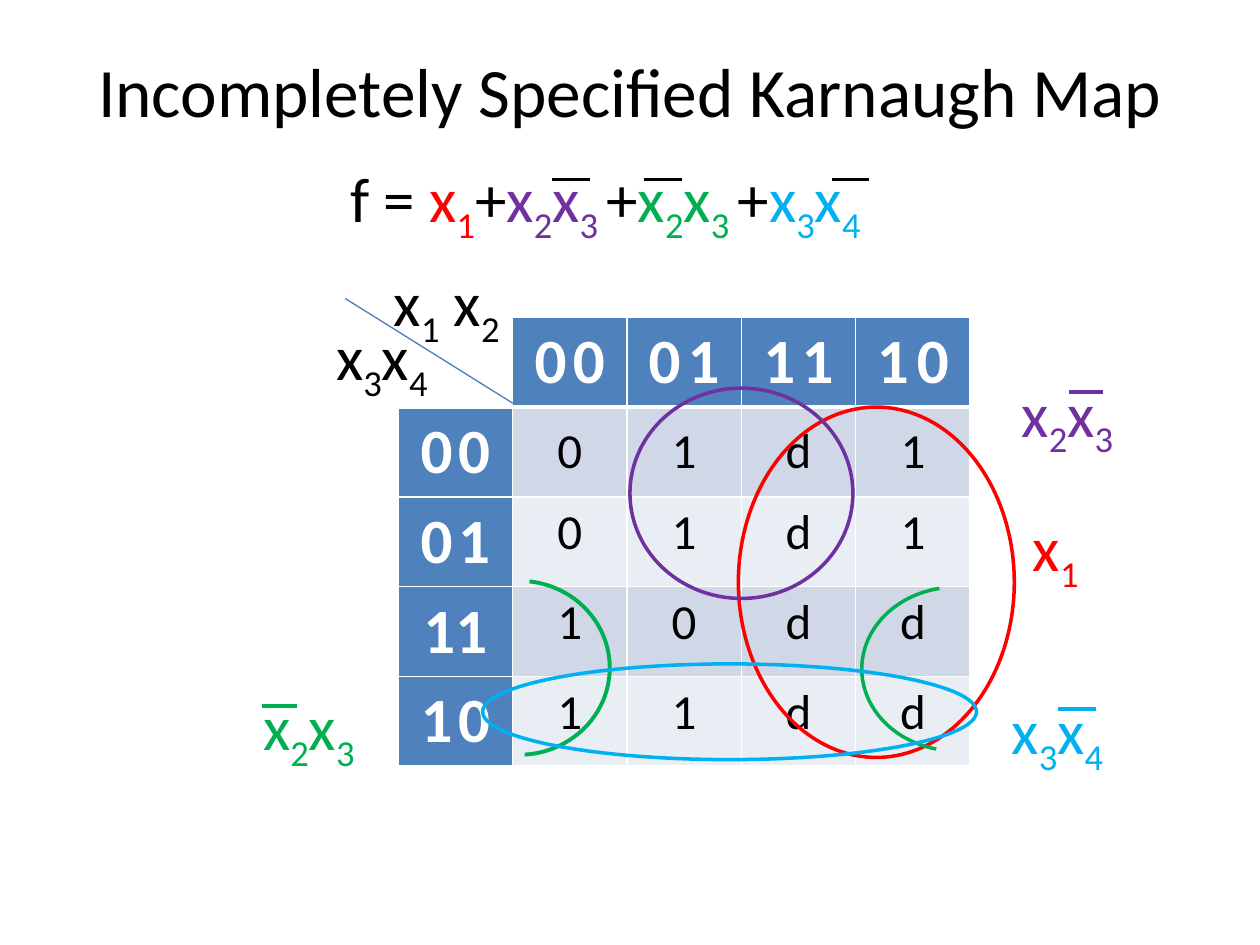
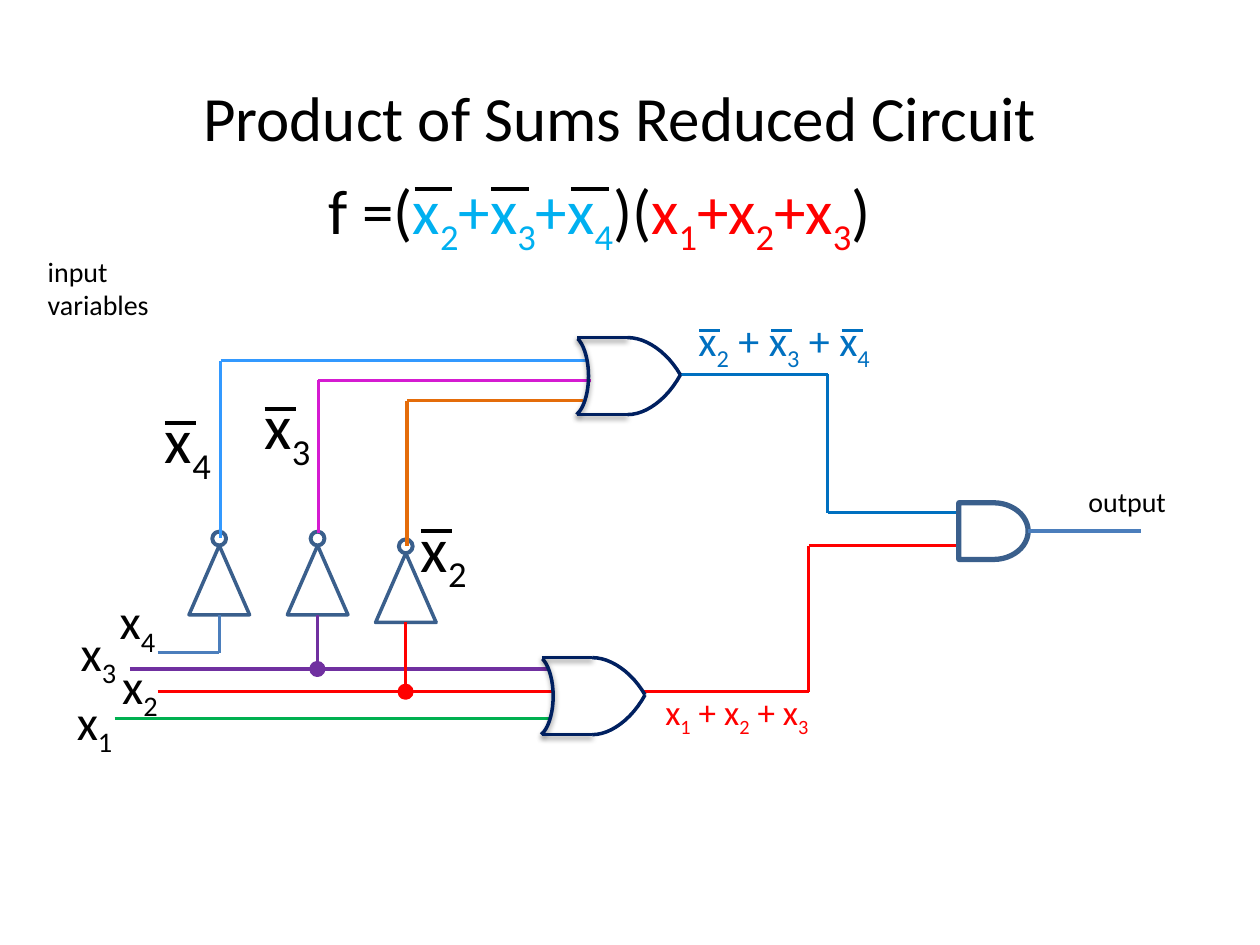
from itertools import pairwise

from lxml import etree
from pptx import Presentation
from pptx.dml.color import RGBColor
from pptx.enum.shapes import MSO_CONNECTOR, MSO_SHAPE
from pptx.enum.text import MSO_ANCHOR, PP_ALIGN
from pptx.oxml.ns import qn
from pptx.util import Pt

STRAIGHT = MSO_CONNECTOR.STRAIGHT
ELLIPSE, ARC = MSO_SHAPE.OVAL, MSO_SHAPE.ARC
TRIANGLE, DELAY = MSO_SHAPE.ISOSCELES_TRIANGLE, MSO_SHAPE.FLOWCHART_DELAY
CENTER, LEFT = PP_ALIGN.CENTER, PP_ALIGN.LEFT
MIDDLE, TOP = MSO_ANCHOR.MIDDLE, MSO_ANCHOR.TOP

FONT = "Calibri"
COLORS = {
    "black": "000000", "white": "FFFFFF", "red": "FF0000", "purple": "7030A0",
    "green": "00B050", "sky": "00B0F0", "blue": "0070C0", "steel": "4B7EBC",
    "gate": "3A5F8C", "navy": "002060", "azure": "3399FF", "magenta": "D51BD1",
    "orange": "E46C0A", "header": "4F81BD", "band_dark": "D0D8E8", "band_light": "E9EDF4",
}


def color_of(name):
    """Return the RGB colour with the given name."""
    return RGBColor.from_string(COLORS[name])


def add_run(paragraph, text, size, color, bold=False, subscript=False):
    """Append one formatted run to a paragraph."""
    run = paragraph.add_run()
    run.text = text
    run.font.name = FONT
    run.font.size = Pt(size)
    run.font.bold = bold
    run.font.color.rgb = color_of(color)
    if subscript:
        run.font._element.set("baseline", "-25000")


def write_text(frame, pieces, size=36, color="black", align=LEFT, anchor=TOP):
    """Write text, or (text, colour) pieces, with subscripts in square brackets."""
    frame.word_wrap = True
    frame.vertical_anchor = anchor
    paragraph = frame.paragraphs[0]
    paragraph.alignment = align
    for text, piece_color in [(pieces, color)] if isinstance(pieces, str) else pieces:
        first, *others = text.split("[")
        if first:
            add_run(paragraph, first, size, piece_color)
        for part in others:
            index, _, rest = part.partition("]")
            add_run(paragraph, index, size, piece_color, subscript=True)
            if rest:
                add_run(paragraph, rest, size, piece_color)


def add_label(slide, box, pieces, inset=True, **text_format):
    """Add a text box, with or without inner margins."""
    frame = slide.shapes.add_textbox(*map(Pt, box)).text_frame
    if not inset:
        frame.margin_left = frame.margin_right = frame.margin_top = frame.margin_bottom = 0
    write_text(frame, pieces, **text_format)


def finish_outline(shape, color, weight, shadowed=False):
    """Set the line of a shape or connector and its shadow."""
    shape.line.color.rgb = color_of(color)
    shape.line.width = Pt(weight)
    properties = shape._element.spPr
    effects = etree.SubElement(properties, qn("a:effectLst"))
    if shadowed:
        shadow = etree.SubElement(effects, qn("a:outerShdw"), blurRad=str(Pt(3.1)),
                                  dist=str(Pt(1.6)), dir="5400000", rotWithShape="0")
        tint = etree.SubElement(shadow, qn("a:srgbClr"), val=COLORS["black"])
        etree.SubElement(tint, qn("a:alpha"), val="38000")


def add_line(slide, start, end, color, weight=1.75, shadowed=False):
    """Add a straight connector between two points."""
    connector = slide.shapes.add_connector(STRAIGHT, *map(Pt, (*start, *end)))
    finish_outline(connector, color, weight, shadowed)
    return connector


def add_outline(slide, kind, box, color, weight=2, fill=None, angles=(), shadowed=False):
    """Add a preset shape, hollow unless a fill is given."""
    shape = slide.shapes.add_shape(kind, *map(Pt, box))
    for index, angle in enumerate(angles):
        shape.adjustments[index] = angle
    if fill:
        shape.fill.solid()
        shape.fill.fore_color.rgb = color_of(fill)
    else:
        shape.fill.background()
    finish_outline(shape, color, weight, shadowed)
    return shape


def add_term(slide, box, pieces, bars=(), rise=13.7, length=21.6, bar_color=None,
             weight=2.25, **text_format):
    """Add a Boolean expression with bars over its negated variables."""
    add_label(slide, box, pieces, **text_format)
    left, top = box[:2]
    for bar in bars:
        add_line(slide, (left + bar, top + rise), (left + bar + length, top + rise),
                 bar_color or text_format.get("color", "black"), weight)


def add_titled_slide(presentation, title, box, size):
    """Add a title-only slide and format its title."""
    slide = presentation.slides.add_slide(presentation.slide_layouts[5])
    shape = slide.shapes.title
    shape.left, shape.top, shape.width, shape.height = map(Pt, box)
    write_text(shape.text_frame, title, size=size, align=CENTER, anchor=MIDDLE)
    return slide


def format_cell(cell, fill, top=1, bottom=1):
    """Give a cell white borders and a fill."""
    properties = cell._tc.get_or_add_tcPr()
    for side, weight in (("L", 1), ("R", 1), ("T", top), ("B", bottom)):
        border = etree.SubElement(properties, qn(f"a:ln{side}"), w=str(Pt(weight)))
        solid = etree.SubElement(border, qn("a:solidFill"))
        etree.SubElement(solid, qn("a:srgbClr"), val=COLORS["white"])
    cell.fill.solid()
    cell.fill.fore_color.rgb = color_of(fill)


def write_code(cell, code, gap):
    """Write a two-bit heading with a small space between the bits."""
    cell.vertical_anchor = MIDDLE
    paragraph = cell.text_frame.paragraphs[0]
    paragraph.alignment = CENTER
    if not gap:
        add_run(paragraph, code, 36, "white", bold=True)
        return
    for text, size in ((code[0], 36), (" ", gap), (code[1], 36)):
        add_run(paragraph, text, size, "white", bold=True)


def add_map_table(slide, box):
    """Add the Karnaugh map grid."""
    codes = ("00", "01", "11", "10")
    values = ("01d1", "01d1", "10dd", "11dd")
    frame = slide.shapes.add_table(5, 5, *map(Pt, box))
    table = frame.table
    for row in table.rows:
        row.height = Pt(46.8)
    frame.height = Pt(box[3])
    format_cell(table.cell(0, 0), "white", bottom=3)
    for column, (code, gap) in enumerate(zip(codes, (16, 18, 16, 20)), 1):
        cell = table.cell(0, column)
        format_cell(cell, "header", bottom=3)
        write_code(cell, code, gap)
    for row, (code, gap, entries) in enumerate(zip(codes, (14, 14, None, 14), values), 1):
        top = 3 if row == 1 else 1
        format_cell(table.cell(row, 0), "header", top=top)
        write_code(table.cell(row, 0), code, gap)
        for column, entry in enumerate(entries, 1):
            cell = table.cell(row, column)
            format_cell(cell, "band_dark" if row % 2 else "band_light", top=top)
            write_text(cell.text_frame, entry, size=28, align=CENTER)
            cell.vertical_anchor = MIDDLE if row == 1 else TOP


def add_karnaugh_map(slide, box):
    """Add the map with its axis labels, loops and product terms."""
    left, top = box[:2]

    def place(x, y, *size):
        return left + x, top + y, *size

    add_map_table(slide, box)
    add_line(slide, place(65.5, 49), place(-30.2, -10.8), "steel", 0.75)
    add_label(slide, place(-9.6, -34.5, 90, 51), "x[1] x[2]")
    add_label(slide, place(-42.5, -3.6, 86, 51), "x[3]x[4]")

    loops = (
        (ELLIPSE, (194.4, 51.2, 157.7, 200.2), "red", 2, ()),
        (ARC, (265, 154.1, 108, 93.6), "green", 2, (62.42, 154.92)),
        (ARC, (17.3, 150.5, 103.7, 99.4), "green", 2.25, (166.14, 51.76)),
        (ELLIPSE, (48.3, 198, 282.2, 54.7), "sky", 2, ()),
        (ELLIPSE, (132.5, 40.4, 127.4, 120.2), "purple", 2, ()),
    )
    for kind, loop_box, color, weight, angles in loops:
        add_outline(slide, kind, place(*loop_box), color, weight, angles=angles)

    terms = (
        ("x[3]x[4]", (343.5, 210.3), "sky", (33.8,), 21.6),
        ("x[2]x[3]", (349.2, 28.8), "purple", (33.9,), 19.4),
        ("x[2]x[3]", (-84.2, 208.1), "green", (6.5,), 20),
        ("x[1]", (355.7, 105.9), "red", (), 0),
    )
    for text, corner, color, bars, length in terms:
        add_term(slide, place(*corner, 80, 51), text, bars, length=length, color=color)


def add_inverter(slide, left, top):
    """Add an upward NOT gate with its bubble."""
    add_outline(slide, TRIANGLE, (left, top + 7.9, 34.6, 39.6), "gate")
    add_outline(slide, ELLIPSE, (left + 13.3, top, 7.9, 7.9), "gate", 2.25, fill="white")


def add_or_gate(slide, left, top):
    """Add an OR gate: curved back, two edges and a pointed front."""
    add_outline(slide, ARC, (left, top, 20.9, 46.8), "navy",
                angles=(168.84, 48.41), shadowed=True)
    tip_x, tip_y, steps = 73.4, 22.7, 12
    for edge in (1.4, 45.4):
        add_line(slide, (left + 14.4, top + edge), (left + 43.2, top + edge),
                 "navy", 2, shadowed=True)
        controls = ((43.2, edge), (54, edge), (66, edge + 0.4 * (tip_y - edge)), (tip_x, tip_y))
        points = []
        for step in range(steps + 1):
            t = step / steps
            weights = ((1 - t) ** 3, 3 * t * (1 - t) ** 2, 3 * t ** 2 * (1 - t), t ** 3)
            x, y = (sum(w * p[axis] for w, p in zip(weights, controls)) for axis in (0, 1))
            points.append((Pt(left + x), Pt(top + y)))
        builder = slide.shapes.build_freeform(*points[0], scale=1.0)
        builder.add_line_segments(points[1:], close=False)
        front = builder.convert_to_shape()
        front.fill.background()
        finish_outline(front, "navy", 2)


def add_circuit(slide, left, top):
    """Add the product of sums circuit from inputs to output."""
    def place(x, y, *size):
        return left + x, top + y, *size

    for corner in ((88, 163.8), (144.2, 163.8), (194.6, 168.2)):
        add_inverter(slide, *place(*corner))

    wires = (
        ("steel", (70, 233), (105.4, 233), (105.4, 211.4)),
        ("purple", (54.2, 242.3), (293.9, 242.3)),
        ("purple", (161.4, 242.3), (161.4, 211.4)),
        ("red", (70, 255.3), (296.8, 255.3)),
        ("red", (211.8, 215.7), (211.8, 255.3)),
        ("green", (45.5, 270.4), (293.9, 270.4)),
        ("azure", (106, 167.4), (106, 66.2), (316.2, 66.2)),
        ("magenta", (161.8, 164.6), (161.8, 77.4), (317.7, 77.4)),
        ("orange", (212.6, 171.8), (212.6, 89), (313.4, 89)),
        ("blue", (368.8, 73.8), (453, 73.8), (453, 153), (527.2, 153)),
        ("red", (347.9, 255.3), (442.2, 255.3), (442.2, 171.8), (528.6, 171.8)),
    )
    for color, *points in wires:
        for start, end in pairwise(points):
            add_line(slide, place(*start), place(*end), color)
    for color, x, y in (("purple", 161.4, 242.3), ("red", 211.8, 255.3)):
        add_outline(slide, ELLIPSE, place(x - 3.6, y - 3.6, 7.2, 7.2), color, fill=color)

    for corner in ((295.4, 51.5), (275.2, 234.4)):
        add_or_gate(slide, *place(*corner))
    and_gate = add_outline(slide, DELAY, place(527.9, 147.3, 39.6, 32.4), "gate", 3)
    output_wire = add_line(slide, place(567.5, 163.5), place(632.3, 163.5), "steel", 2.5)
    output_wire.begin_connect(and_gate, 3)

    for text, x, y in (("x[4]", 48.4, 197.7), ("x[3]", 26.1, 215.7),
                       ("x[2]", 49.8, 234.4), ("x[1]", 23.9, 255.3)):
        add_label(slide, place(x, y, 36, 33.8), text, inset=False, size=28)
    for text, x, y in (("x[4]", 74.3, 89), ("x[3]", 131.2, 81), ("x[2]", 220.5, 150.9)):
        add_term(slide, place(x, y, 38.9, 43.9), text, (0,), rise=12.6, length=18,
                 weight=2, inset=False)
    add_label(slide, place(0.2, 1.8, 86.4, 46.1), "input variables", size=16)
    add_label(slide, place(594.9, 133.6, 68.4, 26.6), "output", size=16)
    add_label(slide, place(353.1, 251, 106, 31.7), "x[1] + x[2] + x[3]", size=20, color="red")
    add_term(slide, place(372, 36.4, 132, 36), "x[2] + x[3] + x[4]", (7.6, 48.6, 89),
             rise=12.6, length=12, weight=1.75, size=24, color="blue")


def main():
    """Build both slides and save the presentation."""
    presentation = Presentation()
    presentation.slide_width, presentation.slide_height = Pt(720), Pt(540)

    slide = add_titled_slide(presentation, "Incompletely Specified Karnaugh Map",
                             (36, 14.4, 648, 73.4), 39.6)
    add_karnaugh_map(slide, (227.5, 181.4, 326.9, 252))
    formula = (("f = ", "black"), ("x[1]", "red"), ("+", "black"), ("x[2]x[3 ]", "purple"),
               ("+", "black"), ("x[2]x[3 ]", "green"), ("+", "black"), ("x[3]x[4]", "sky"))
    add_term(slide, (193.1, 87.8, 328, 51), formula, (122.3, 174.8, 282.1), rise=14.8)

    slide = add_titled_slide(presentation, "Product of Sums Reduced Circuit",
                             (12.2, 21.6, 684, 90), 36)
    add_circuit(slide, 20, 140)
    formula = (("f =(", "black"), ("x[2]+x[3]+x[4]", "sky"), (")(", "black"),
               ("x[1]+x[2]+x[3]", "red"), (")", "black"))
    add_term(slide, (180.9, 94.3, 335, 51), formula, (56, 99.9, 145.3))

    presentation.save("out.pptx")


if __name__ == "__main__":
    main()
